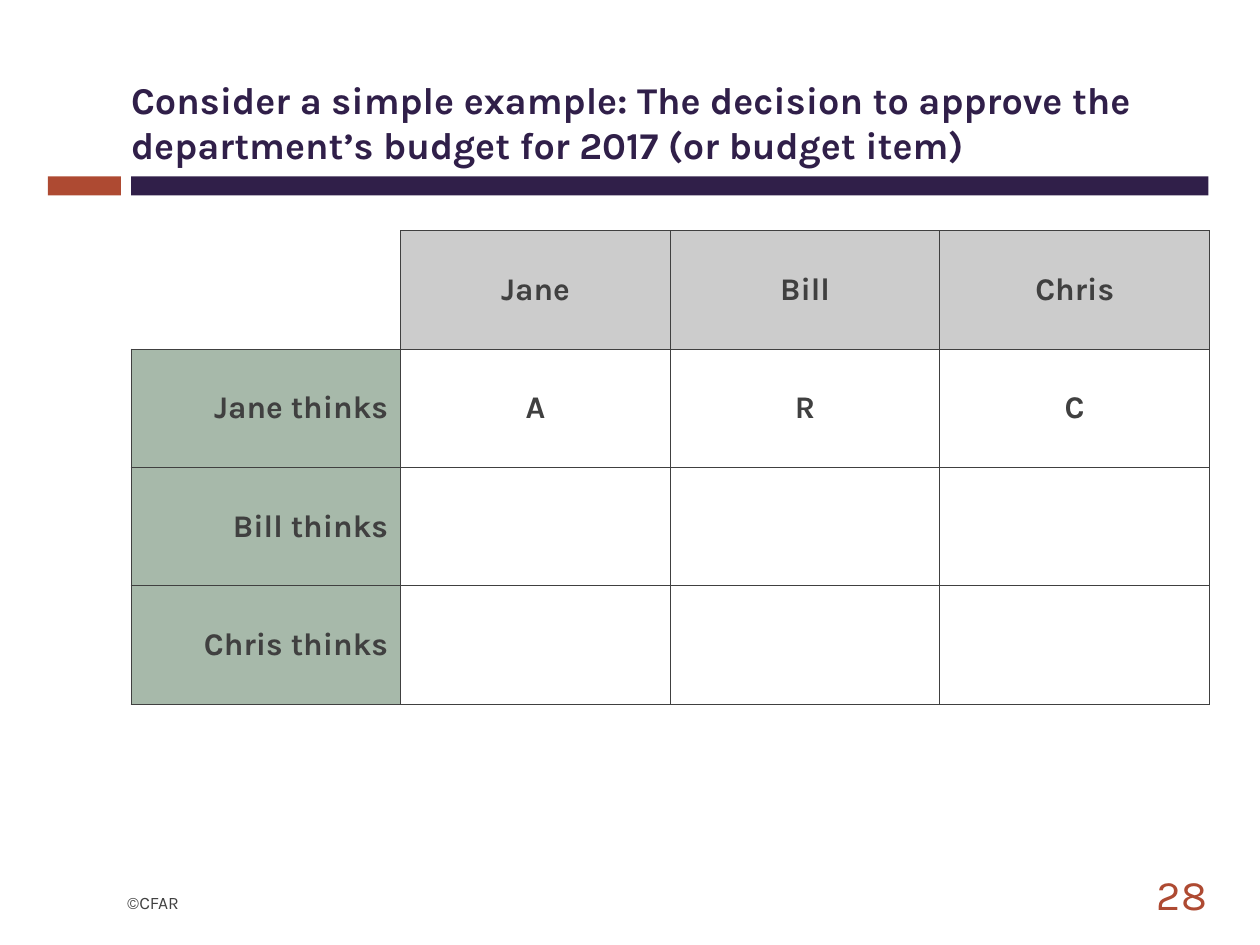
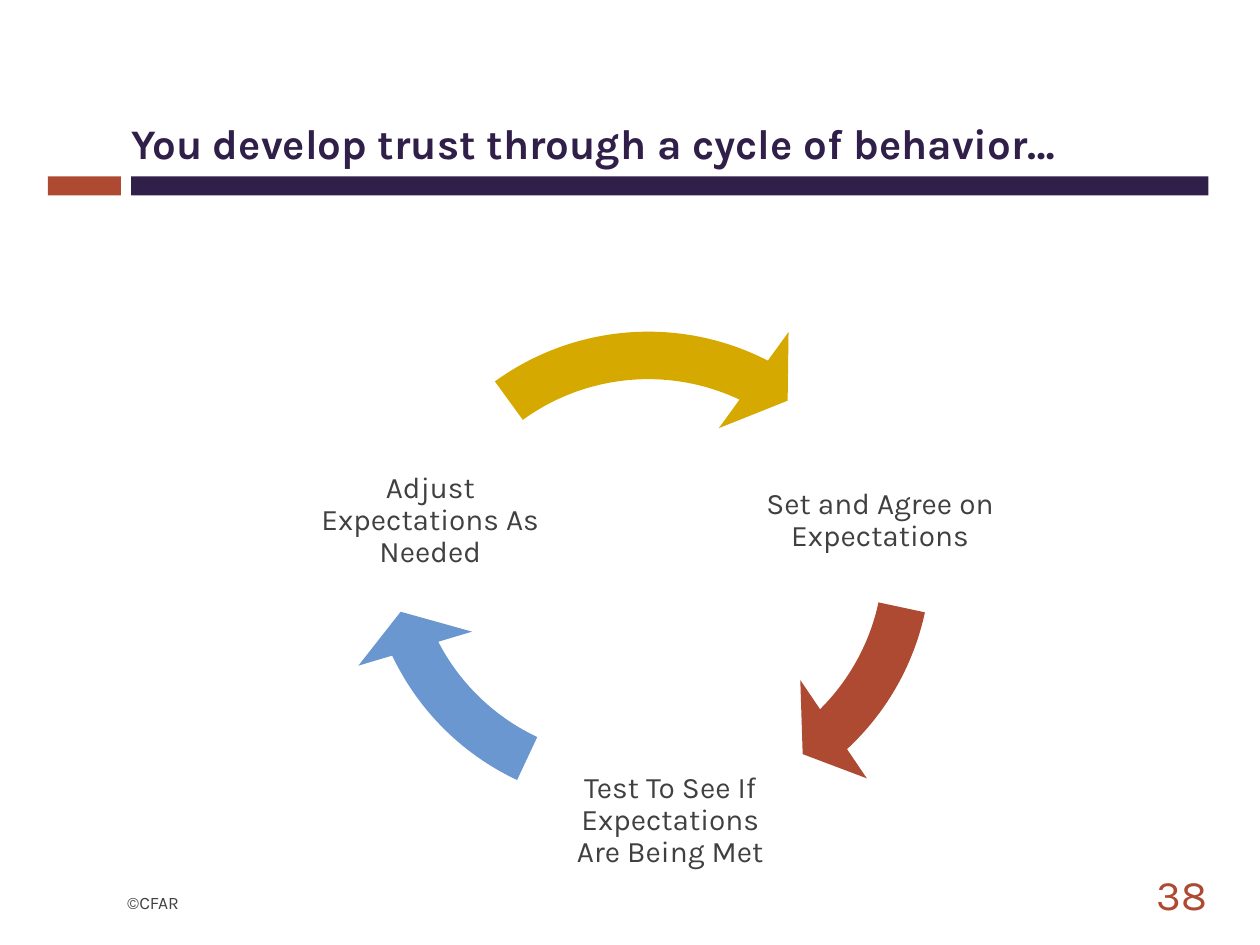
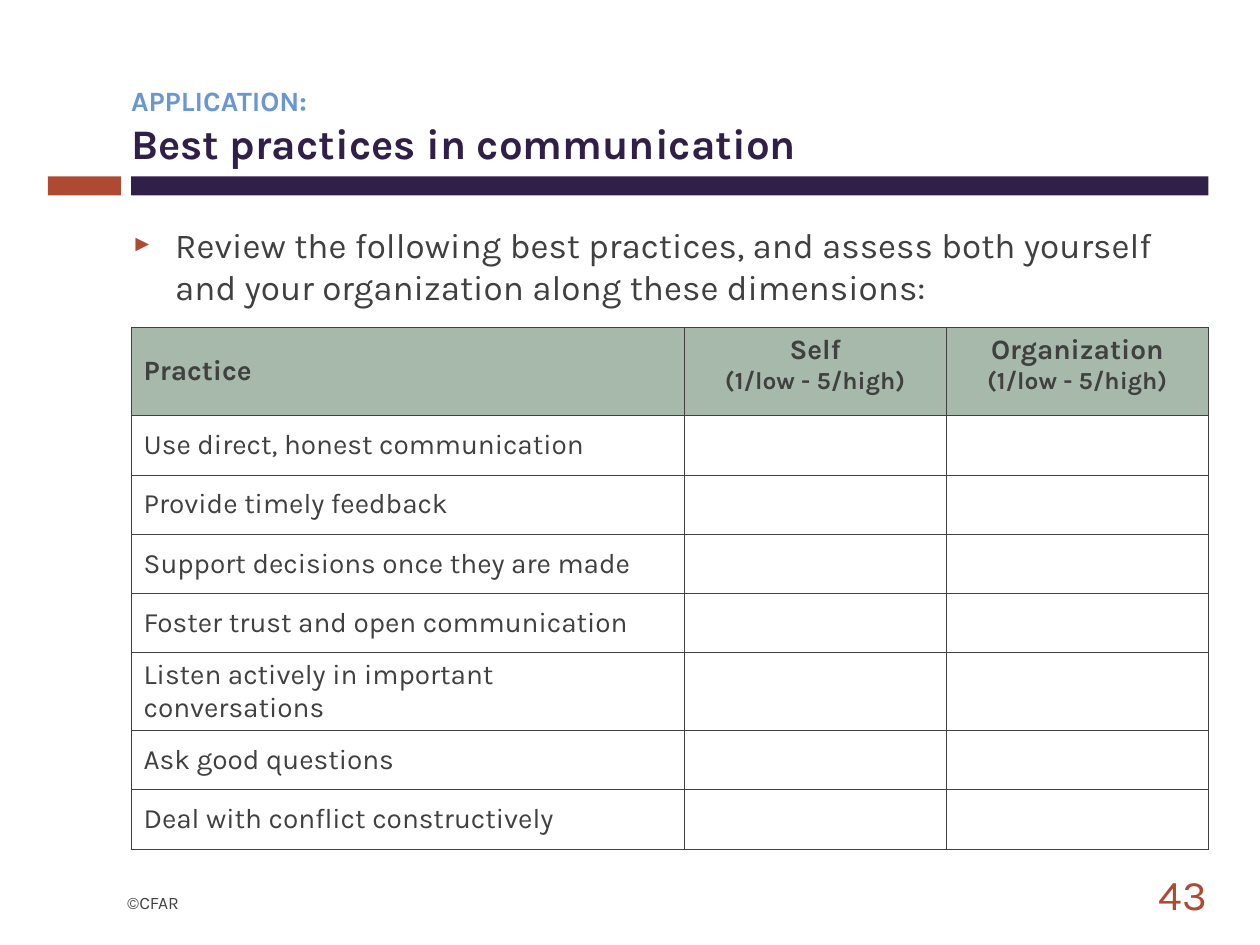
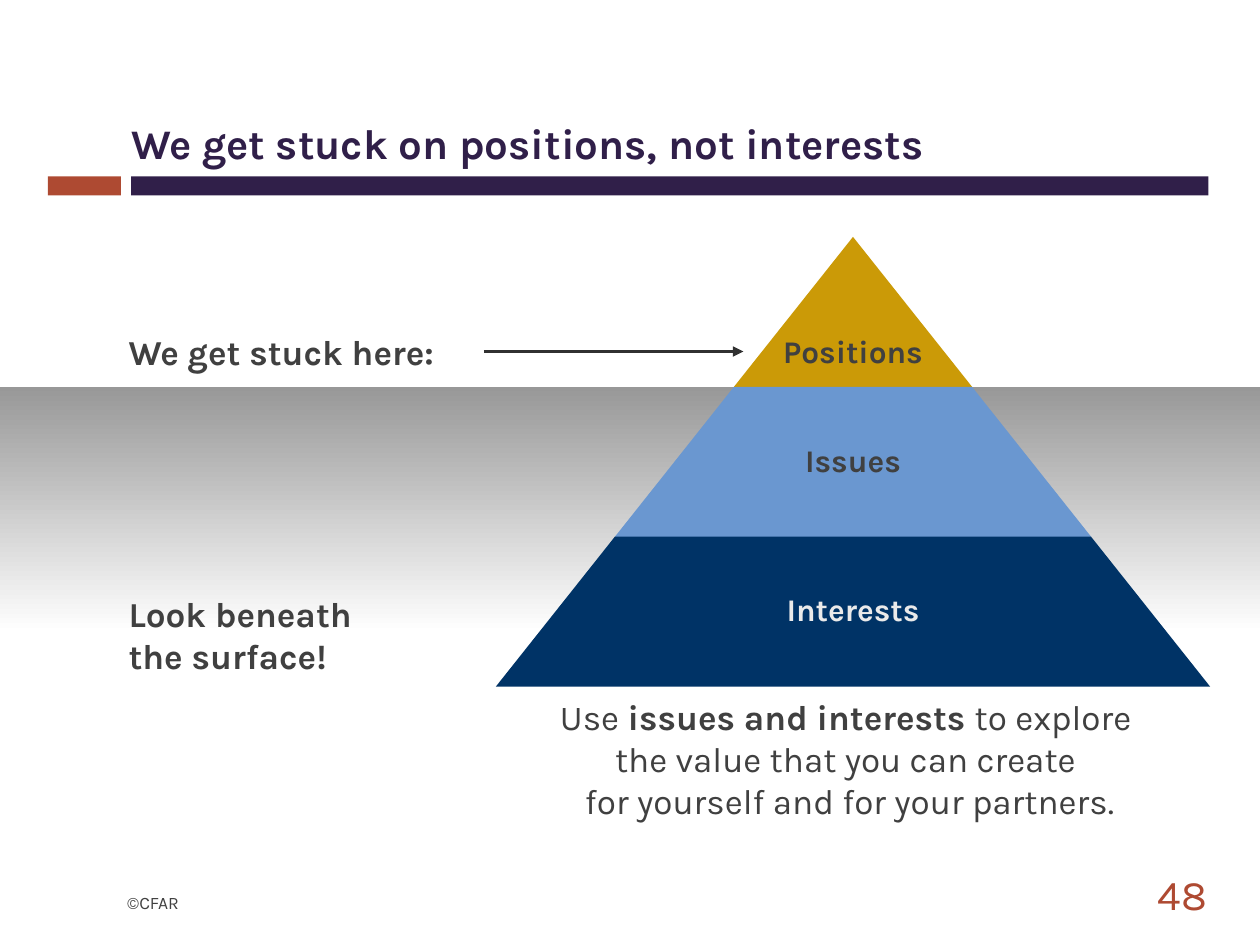
from dataclasses import dataclass
from typing import Optional, Sequence

from lxml.etree import SubElement
from pptx import Presentation
from pptx.dml.color import RGBColor
from pptx.enum.shapes import MSO_CONNECTOR, MSO_SHAPE
from pptx.enum.text import MSO_ANCHOR, MSO_AUTO_SIZE, PP_ALIGN
from pptx.oxml.ns import qn
from pptx.util import Inches, Pt

# Shared look
FONT = "Karla"
RUST = RGBColor(0xAE, 0x4A, 0x32)
PURPLE = RGBColor(0x30, 0x1F, 0x49)
TEXT = RGBColor(0x40, 0x40, 0x40)
BLUE = RGBColor(0x6A, 0x97, 0xD0)
GOLD = RGBColor(0xD6, 0xA9, 0x00)
DARK_GOLD = RGBColor(0xCB, 0x9A, 0x07)
NAVY = RGBColor(0x00, 0x33, 0x66)
PALE = RGBColor(0xEA, 0xEA, 0xEA)
SAGE = RGBColor(0xA7, 0xB9, 0xAA)
HEADER_GRAY = RGBColor(0xCC, 0xCC, 0xCC)
WATER_GRAY = RGBColor(0x98, 0x98, 0x98)
WHITE = RGBColor(0xFF, 0xFF, 0xFF)
ARROW_GRAY = RGBColor(0x31, 0x31, 0x31)

TITLE_AND_BODY, TITLE_ONLY = 1, 5
LEFT, CENTER, RIGHT = PP_ALIGN.LEFT, PP_ALIGN.CENTER, PP_ALIGN.RIGHT
TOP, MIDDLE, BOTTOM = MSO_ANCHOR.TOP, MSO_ANCHOR.MIDDLE, MSO_ANCHOR.BOTTOM
NO_INSETS = (0, 0, 0, 0)
FLUSH_LEFT = (0, 0.05, 0.1, 0.05)
NORMAL_INSETS = (0.1, 0.05, 0.1, 0.05)


@dataclass(frozen=True)
class Area:
    left: float
    top: float
    width: float
    height: float

    def lengths(self) -> tuple:
        return tuple(Inches(v) for v in (self.left, self.top, self.width, self.height))


@dataclass(frozen=True)
class Style:
    size: float
    color: RGBColor = TEXT
    bold: bool = False
    align: PP_ALIGN = LEFT
    spacing: float = 1.0


@dataclass(frozen=True)
class Span:
    text: str
    size: Optional[float] = None
    color: Optional[RGBColor] = None
    bold: Optional[bool] = None


@dataclass(frozen=True)
class Cell:
    lines: Sequence[Span] = ()
    style: Style = Style(16)
    fill: Optional[RGBColor] = None
    anchor: MSO_ANCHOR = MIDDLE
    sides: str = "LRTB"


@dataclass(frozen=True)
class CycleStep:
    label: str
    label_area: Area
    arrow_left: float
    arrow_top: float
    start_angle: float
    end_angle: float
    color: RGBColor


@dataclass(frozen=True)
class Tier:
    label: str
    fill: RGBColor
    color: RGBColor
    label_share: float
    anchor: MSO_ANCHOR = MIDDLE
    bottom_inset: float = 0.03


TITLE_STYLE = Style(24, PURPLE, bold=True)
CALLOUT_STYLE = Style(20, bold=True)


# Text
def write(para, spans: Sequence[Span], style: Style) -> None:
    para.alignment = style.align
    para.line_spacing = style.spacing
    para.space_before = Pt(0)
    font = para.font
    font.name, font.size, font.bold = FONT, Pt(style.size), style.bold
    font.color.rgb = style.color
    for item in spans:
        for index, part in enumerate(item.text.split("\n")):
            if index:
                para.add_line_break()
            if not part:
                continue
            span = para.add_run()
            span.text = part
            if item.size is not None:
                span.font.size = Pt(item.size)
            if item.color is not None:
                span.font.color.rgb = item.color
            if item.bold is not None:
                span.font.bold = item.bold


def set_frame(frame, insets: Sequence[float], anchor: MSO_ANCHOR) -> None:
    frame.word_wrap = True
    frame.auto_size = MSO_AUTO_SIZE.NONE
    frame.vertical_anchor = anchor
    (frame.margin_left, frame.margin_top,
     frame.margin_right, frame.margin_bottom) = (Inches(v) for v in insets)


def place(placeholder, area: Area, anchor: MSO_ANCHOR):
    (placeholder.left, placeholder.top,
     placeholder.width, placeholder.height) = area.lengths()
    set_frame(placeholder.text_frame, FLUSH_LEFT, anchor)
    return placeholder.text_frame.paragraphs[0]


def add_text(page, area: Area, spans: Sequence[Span], style: Style,
             insets: Sequence[float] = NO_INSETS, anchor: MSO_ANCHOR = MIDDLE) -> None:
    box = page.shapes.add_textbox(*area.lengths())
    set_frame(box.text_frame, insets, anchor)
    write(box.text_frame.paragraphs[0], spans, style)


def add_bullet(para) -> None:
    props = para._p.get_or_add_pPr()
    props.set("marL", str(Inches(0.35)))
    props.set("indent", str(Inches(-0.35)))
    color = SubElement(props, qn("a:buClr"))
    SubElement(color, qn("a:srgbClr"), val=str(RUST))
    SubElement(props, qn("a:buSzPct"), val="65000")
    SubElement(props, qn("a:buFont"), typeface="Arial")
    SubElement(props, qn("a:buChar"), char="►")


# Shapes
def add_solid(page, kind: MSO_SHAPE, area: Area, color: RGBColor):
    shape = page.shapes.add_shape(kind, *area.lengths())
    shape.shadow.inherit = False
    shape.fill.solid()
    shape.fill.fore_color.rgb = color
    shape.line.fill.background()
    return shape


def add_arrow(page, left: float, right: float, y: float) -> None:
    arrow = page.shapes.add_connector(
        MSO_CONNECTOR.STRAIGHT, Inches(left), Inches(y), Inches(right), Inches(y))
    arrow.line.color.rgb = ARROW_GRAY
    arrow.line.width = Pt(2)
    SubElement(arrow.line._get_or_add_ln(), qn("a:tailEnd"), type="triangle")
    SubElement(arrow._element.spPr, qn("a:effectLst"))


# Tables
def add_borders(cell, sides: str) -> None:
    props = cell._tc.get_or_add_tcPr()
    for side in sides:
        line = SubElement(props, qn(f"a:ln{side}"), w=str(Pt(0.5)))
        fill = SubElement(line, qn("a:solidFill"))
        SubElement(fill, qn("a:srgbClr"), val=str(TEXT))


def add_grid(page, left: float, top: float, widths: Sequence[float],
             heights: Sequence[float], rows: Sequence[Sequence[Cell]]) -> None:
    area = Area(left, top, sum(widths), sum(heights))
    table = page.shapes.add_table(len(heights), len(widths), *area.lengths()).table
    table.first_row = table.horz_banding = False
    for column, width in zip(table.columns, widths):
        column.width = Inches(width)
    for row, height, contents in zip(table.rows, heights, rows):
        row.height = Inches(height)
        for cell, content in zip(row.cells, contents):
            add_borders(cell, content.sides)
            cell.vertical_anchor = content.anchor
            if content.fill is None:
                cell.fill.background()
            else:
                cell.fill.solid()
                cell.fill.fore_color.rgb = content.fill
            for index, line in enumerate(content.lines):
                frame = cell.text_frame
                para = frame.add_paragraph() if index else frame.paragraphs[0]
                write(para, [line], content.style)


# Page with title, bands and footer
def add_page(deck, number: int, title: Sequence[Span],
             style: Style = TITLE_STYLE, layout: int = TITLE_ONLY):
    page = deck.slides.add_slide(deck.slide_layouts[layout])
    add_solid(page, MSO_SHAPE.RECTANGLE, Area(0.38, 1.4, 0.58, 0.15), RUST)
    add_solid(page, MSO_SHAPE.RECTANGLE, Area(1.04, 1.4, 8.55, 0.15), PURPLE)
    add_text(page, Area(1.01, 7.01, 0.48, 0.31), [Span("©CFAR")], Style(10))
    write(place(page.shapes.title, Area(1.04, 0.5, 8.54, 0.88), BOTTOM), title, style)
    add_text(page, Area(8.9, 6.83, 0.68, 0.52), [Span(str(number))],
             Style(24, RUST, align=RIGHT))
    return page


def build_decision_page(deck) -> None:
    page = add_page(
        deck, 28,
        [Span("Consider a simple example: The decision to approve the "
              "department’s budget for 2017 (or budget item)")],
        Style(21.6, PURPLE, bold=True))
    people = ("Jane", "Bill", "Chris")
    roles = {"Jane": ("A", "R", "C")}
    centered = Style(18, bold=True, align=CENTER)
    row_label = Style(18, bold=True, align=RIGHT)
    rows = [[Cell(sides="RB")]
            + [Cell([Span(name)], centered, HEADER_GRAY) for name in people]]
    for name in people:
        answers = [Cell([Span(role)], centered) for role in roles.get(name, ())]
        rows.append([Cell([Span(f"{name} thinks")], row_label, SAGE)]
                    + (answers or [Cell()] * len(people)))
    add_grid(page, 1.04, 1.83, [2.14] * 4, [0.94] * 4, rows)


def build_cycle_page(deck) -> None:
    page = add_page(deck, 38, [Span("You develop trust through a cycle of behavior…")])
    steps = (
        CycleStep("Set and Agree on Expectations", Area(5.99, 3.14, 1.99, 1.99),
                  2.96, 2.07, 12.12, 46.32, RUST),
        CycleStep("Test To See If Expectations Are Being Met",
                  Area(4.48, 5.52, 1.68, 1.99), 2.63, 1.96, 115.15, 153.74, BLUE),
        CycleStep("Adjust Expectations As Needed", Area(2.42, 3.14, 1.99, 1.99),
                  2.79, 2.35, 234.04, 296.37, GOLD),
    )
    angle_unit = 0.6  # adjustment value of one degree
    for step in steps:
        add_text(page, step.label_area, [Span(step.label)],
                 Style(17, align=CENTER, spacing=0.9), (0.02,) * 4)
        arrow = add_solid(page, MSO_SHAPE.CIRCULAR_ARROW,
                          Area(step.arrow_left, step.arrow_top, 4.71, 4.71), step.color)
        values = (0.08, 9.59 * angle_unit, step.end_angle * angle_unit,
                  step.start_angle * angle_unit, 0.1)
        for index, value in enumerate(values):
            arrow.adjustments[index] = value


def build_practices_page(deck) -> None:
    page = add_page(
        deck, 43,
        [Span("APPLICATION:\n", 16, BLUE), Span("Best practices in communication")],
        layout=TITLE_AND_BODY)
    para = place(page.placeholders[1], Area(1.04, 1.72, 8.54, 4.95), TOP)
    add_bullet(para)
    write(para, [Span("Review the following best practices, and assess both yourself "
                      "and your organization along these dimensions:")], Style(20))

    practices = (
        "Use direct, honest communication",
        "Provide timely feedback",
        "Support decisions once they are made",
        "Foster trust and open communication",
        "Listen actively in important conversations",
        "Ask good questions",
        "Deal with conflict constructively",
    )
    scale = Span("(1/low - 5/high)", 14)
    rows = [[Cell([Span("Practice")], Style(16, bold=True), SAGE)]
            + [Cell([Span(who), scale], Style(16, bold=True, align=CENTER), SAGE, TOP)
               for who in ("Self", "Organization")]]
    rows += [[Cell([Span(practice)]), Cell(), Cell()] for practice in practices]
    add_grid(page, 1.04, 2.6, [4.39, 2.08, 2.08],
             [0.7] + [0.47] * len(practices), rows)


def build_pyramid_page(deck) -> None:
    page = add_page(deck, 48, [Span("We get stuck on positions, not interests")])

    # Water below the surface
    water = add_solid(page, MSO_SHAPE.RECTANGLE, Area(0, 3.07, 10, 3.9), WHITE)
    water.fill.gradient()
    water.fill.gradient_angle = 270
    stops = ((0, WATER_GRAY), (0.5, WHITE))
    for stop, (position, color) in zip(water.fill.gradient_stops, stops):
        stop.position = position
        stop.color.rgb = color

    # Pyramid
    center, peak, step, height = 6.77, 1.88, 1.89, 1.19
    tiers = (
        Tier("Positions", DARK_GOLD, TEXT, 1, BOTTOM, 0.13),
        Tier("Issues", BLUE, TEXT, 0.65),
        Tier("Interests", NAVY, PALE, 0.65),
    )
    for index, tier in enumerate(tiers):
        width = step * (index + 1)
        top = peak + index * height
        shape = add_solid(page, MSO_SHAPE.TRAPEZOID,
                          Area(center - width / 2, top, width, height), tier.fill)
        shape.adjustments[0] = step / 2 / height
        label_width = width * tier.label_share
        add_text(page, Area(center - label_width / 2, top, label_width, height),
                 [Span(tier.label)], Style(18, tier.color, True, CENTER, 0.9),
                 (0.03, 0.03, 0.03, tier.bottom_inset), tier.anchor)

    # Callouts
    add_text(page, Area(1.02, 4.65, 2.95, 0.77), [Span("Look beneath\nthe surface!")],
             CALLOUT_STYLE, FLUSH_LEFT, TOP)
    add_text(page, Area(1.02, 2.57, 3.29, 0.44), [Span("We get stuck here:")],
             CALLOUT_STYLE, FLUSH_LEFT, TOP)
    add_arrow(page, 3.84, 5.9, 2.79)
    add_text(page, Area(3.9, 5.47, 5.69, 1.11),
             [Span("Use "), Span("issues and interests ", bold=True),
              Span("to explore \nthe value that you can create \n"
                   "for yourself and for your partners.")],
             Style(20, align=CENTER), NORMAL_INSETS, TOP)


def main() -> None:
    deck = Presentation()
    deck.slide_width, deck.slide_height = Inches(10), Inches(7.5)
    build_decision_page(deck)
    build_cycle_page(deck)
    build_practices_page(deck)
    build_pyramid_page(deck)
    deck.save("out.pptx")


if __name__ == "__main__":
    main()
